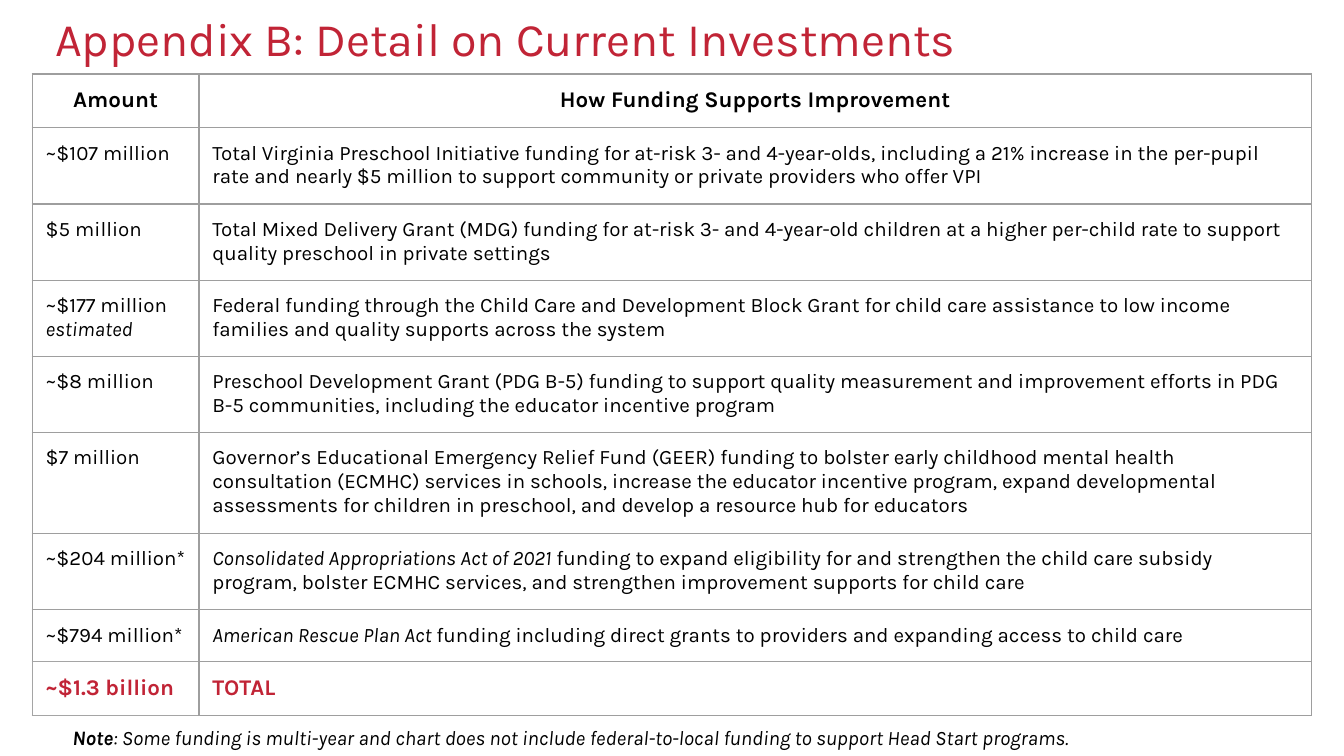
from dataclasses import dataclass

from lxml import etree
from pptx import Presentation
from pptx.dml.color import RGBColor
from pptx.enum import text as t
from pptx.oxml import ns
from pptx.util import Pt


@dataclass(frozen=True)
class Theme:
    font: str = "Karla"
    red: str = "C12436"
    black: str = "000000"
    grid: str = "9E9E9E"
    total_grid: str = "A5A5A5"
    title_size: float = 25
    heading_size: float = 12
    body_size: float = 11
    border: float = 0.75
    inset: float = 7.2


THEME = Theme()
ITALIC = {"italic": True}
HEADING = {"bold": True, "size": THEME.heading_size}
TOTAL = {**HEADING, "color": THEME.red}

COLUMN_WIDTHS = [89.28, 596.16]
ROW_HEIGHTS = [27.36, 38.88, 38.88, 38.88, 38.88, 51.84, 38.88, 26.64, 28.08]

# Each cell is a list of paragraphs; each paragraph is a list of (text, style) runs.
ROWS = [
    ([[("Amount", HEADING)]], [[("How Funding Supports Improvement", HEADING)]]),
    ([[("~$107 million", {})]],
     [[("Total Virginia Preschool Initiative funding for at-risk 3- and 4-year-olds, "
        "including a 21% increase in the per-pupil rate and nearly $5 million to support "
        "community or private providers who offer VPI", {})]]),
    ([[("$5 million", {})]],
     [[("Total Mixed Delivery Grant (MDG) funding for at-risk 3- and 4-year-old children "
        "at a higher per-child rate to support quality preschool in private settings", {})]]),
    ([[("~$177 million", {})], [("estimated", ITALIC)]],
     [[("Federal funding through the Child Care and Development Block Grant for child care "
        "assistance to low income families and quality supports across the system", {})]]),
    ([[("~$8 million", {})]],
     [[("Preschool Development Grant (PDG B-5) funding to support quality measurement and "
        "improvement efforts in PDG B-5 communities, including the educator incentive "
        "program", {})]]),
    ([[("$7 million", {})]],
     [[("Governor’s Educational Emergency Relief Fund (GEER) funding to bolster early "
        "childhood mental health consultation (ECMHC) services in schools, increase the "
        "educator incentive program, expand developmental assessments for children in "
        "preschool, and develop a resource hub for educators", {})]]),
    ([[("~$204 million*", {})]],
     [[("Consolidated Appropriations Act of 2021 ", ITALIC),
       ("funding to expand eligibility for and strengthen the child care subsidy program, "
        "bolster ECMHC services, and strengthen improvement supports for child care", {})]]),
    ([[("~$794 million*", {})]],
     [[("American Rescue Plan Act ", ITALIC),
       ("funding including direct grants to providers and expanding access to child care",
        {})]]),
    ([[("~$1.3 billion", TOTAL)]], [[("TOTAL", TOTAL)]]),
]


def add_run(paragraph, text, size=THEME.body_size, color=THEME.black, bold=False, italic=False):
    run = paragraph.add_run()
    run.text = text
    font = run.font
    font.name = THEME.font
    font.size = Pt(size)
    font.bold = bold
    font.italic = italic
    font.color.rgb = RGBColor.from_string(color)


def fill_text(frame, paragraphs, alignment=t.PP_ALIGN.LEFT, line_spacing=None):
    for index, runs in enumerate(paragraphs):
        paragraph = frame.add_paragraph() if index else frame.paragraphs[0]
        paragraph.alignment = alignment
        paragraph.line_spacing = line_spacing
        for text, style in runs:
            add_run(paragraph, text, **style)


def add_text_box(slide, box, paragraphs, insets, anchor=t.MSO_ANCHOR.TOP, line_spacing=None):
    shape = slide.shapes.add_textbox(*map(Pt, box))
    frame = shape.text_frame
    frame.word_wrap = True
    frame.vertical_anchor = anchor
    frame.margin_left = frame.margin_right = Pt(insets[0])
    frame.margin_top = frame.margin_bottom = Pt(insets[1])
    fill_text(frame, paragraphs, line_spacing=line_spacing)


def set_borders(cell, color):
    properties = cell._tc.get_or_add_tcPr()
    for index, side in enumerate(("lnL", "lnR", "lnT", "lnB")):
        line = etree.Element(ns.qn(f"a:{side}"), w=str(Pt(THEME.border)))
        fill = etree.SubElement(line, ns.qn("a:solidFill"))
        etree.SubElement(fill, ns.qn("a:srgbClr"), val=color)
        properties.insert(index, line)


def add_funding_table(slide, left, top):
    table = slide.shapes.add_table(
        len(ROWS), len(COLUMN_WIDTHS), Pt(left), Pt(top),
        Pt(sum(COLUMN_WIDTHS)), Pt(sum(ROW_HEIGHTS))).table
    table.first_row = table.horz_banding = False
    for column, width in zip(table.columns, COLUMN_WIDTHS):
        column.width = Pt(width)
    for row, height, contents in zip(table.rows, ROW_HEIGHTS, ROWS):
        row.height = Pt(height)
        heading = contents is ROWS[0]
        for cell, paragraphs in zip(row.cells, contents):
            cell.margin_left = cell.margin_right = Pt(THEME.inset)
            cell.margin_top = cell.margin_bottom = Pt(THEME.inset)
            cell.fill.background()
            set_borders(cell, THEME.grid)
            fill_text(cell.text_frame, paragraphs,
                      t.PP_ALIGN.CENTER if heading else t.PP_ALIGN.LEFT)
    total_amount = table.cell(len(ROWS) - 1, 0)
    for color in total_amount._tc.tcPr.iter(ns.qn("a:srgbClr")):
        color.set("val", THEME.total_grid)


def main():
    presentation = Presentation()
    presentation.slide_width, presentation.slide_height = Pt(720), Pt(405)
    slide = presentation.slides.add_slide(presentation.slide_layouts[6])

    title = ("Appendix B: Detail on Current Investments",
             {"size": THEME.title_size, "color": THEME.red})
    add_text_box(slide, (24.48, -0.72, 671.04, 45.36), [[title]], (5.04, 2.88),
                 t.MSO_ANCHOR.MIDDLE, 0.9)
    add_funding_table(slide, 17.28, 39.6)
    note = [("Note", {"bold": True, "italic": True}),
            (": Some funding is multi-year and chart does not include federal-to-local "
             "funding to support Head Start programs.", ITALIC)]
    add_text_box(slide, (31.68, 381.6, 671.04, 28.08), [note], (THEME.inset, THEME.inset))

    presentation.save("out.pptx")


if __name__ == "__main__":
    main()
